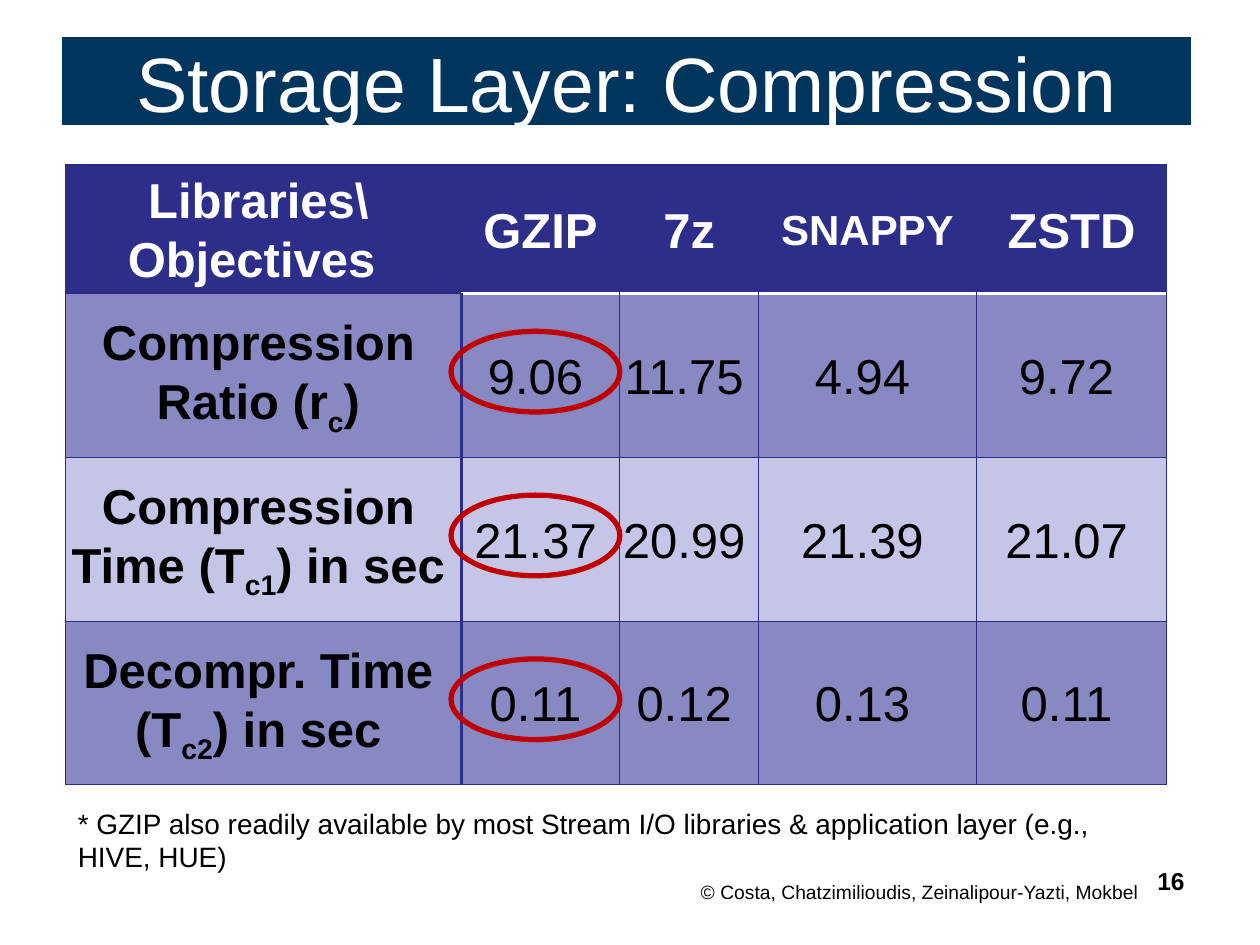
from dataclasses import dataclass

import pptx
import pptx.dml.color
import pptx.enum.shapes
import pptx.enum.text
import pptx.oxml
import pptx.oxml.ns
import pptx.util

Inches, Pt = pptx.util.Inches, pptx.util.Pt
RGB = pptx.dml.color.RGBColor.from_string
Shape = pptx.enum.shapes.MSO_SHAPE
Align = pptx.enum.text.PP_ALIGN
Anchor = pptx.enum.text.MSO_ANCHOR


@dataclass(frozen=True)
class Theme:
    face: str = "Arial"
    banner: str = "00355E"
    head: str = "2D2D8A"
    grid: str = "2A2A89"
    dark: str = "8888C2"
    light: str = "C5C5E8"
    ring: str = "C00000"
    white: str = "FFFFFF"
    black: str = "000000"
    title: float = 44
    cell: float = 28
    small: float = 24
    note: float = 16
    page: float = 14
    credit: float = 11
    thin: float = 0.75
    thick: float = 2
    bold_ring: float = 3


@dataclass(frozen=True)
class Box:
    left: float
    top: float
    width: float
    height: float

    def place(self) -> tuple:
        return tuple(Inches(n) for n in (self.left, self.top, self.width, self.height))


@dataclass(frozen=True)
class Label:
    box: Box
    text: str
    size: float
    align: Align
    bold: bool = False


@dataclass(frozen=True)
class Row:
    lead: tuple  # text, subscript, text
    vals: tuple


T = Theme()

LABELS = (
    Label(Box(5.42, 6.94, 3.76, 0.29),
          "© Costa, Chatzimilioudis, Zeinalipour-Yazti, Mokbel", T.credit, Align.CENTER),
    Label(Box(8.94, 6.82, 0.56, 0.52), "16", T.page, Align.RIGHT, True),
    Label(Box(0.52, 6.35, 8.74, 0.64),
          "* GZIP also readily available by most Stream I/O libraries & "
          "application layer (e.g., HIVE, HUE)", T.note, Align.LEFT),
)
HEADS = ("Libraries\\\nObjectives ", "GZIP", "7z", "SNAPPY", "ZSTD")
ROWS = (
    Row(("Compression Ratio (r", "c", ")"), ("9.06", "11.75", "4.94", "9.72")),
    Row(("Compression Time (T", "c1", ") in sec"), ("21.37", "20.99", "21.39", "21.07")),
    Row(("Decompr. Time (T", "c2", ") in sec"), ("0.11", "0.12", "0.13", "0.11")),
)
WIDTHS = (3.14, 1.26, 1.1, 1.73, 1.51)
HEIGHTS = (1.02, 1.3, 1.3, 1.3)


def put(item, **vals) -> None:
    for key, val in vals.items():
        setattr(item, key, val)


def write(para, text: str, size: float, color: str, bold: bool = False, base: int = 0) -> None:
    run = para.add_run()
    run.text = text
    put(run.font, name=T.face, size=Pt(size), bold=bold)
    run.font.color.rgb = RGB(color)
    if base:
        run.font._element.set("baseline", str(base * 1000))


def edge(cell, **sides: tuple) -> None:
    """Draw cell borders; they must come before the fill, in L, R, T, B order."""
    props = cell._tc.get_or_add_tcPr()
    spot = 0
    for side in "LRTB":
        if side not in sides:
            continue
        color, width = sides[side]
        line = pptx.oxml.parse_xml(
            f'<a:ln{side} {pptx.oxml.ns.nsdecls("a")} w="{int(Pt(width))}">'
            f'<a:solidFill><a:srgbClr val="{color}"/></a:solidFill></a:ln{side}>')
        props.insert(spot, line)
        spot += 1


def style(cell, fill: str):
    put(cell, margin_left=0, margin_top=0, margin_right=Inches(0.08),
        margin_bottom=0, vertical_anchor=Anchor.MIDDLE)
    cell.fill.solid()
    cell.fill.fore_color.rgb = RGB(fill)
    return cell.text_frame


def centre(para):
    put(para, alignment=Align.CENTER, line_spacing=1.07)
    return para


def banner(slide, box: Box, text: str) -> None:
    shape = slide.shapes.add_shape(Shape.RECTANGLE, *box.place())
    shape.shadow.inherit = False
    shape.fill.solid()
    shape.fill.fore_color.rgb = shape.line.color.rgb = RGB(T.banner)
    shape.line.width = Pt(T.thin)
    put(shape.text_frame, word_wrap=True, vertical_anchor=Anchor.MIDDLE)
    para = shape.text_frame.paragraphs[0]
    para.alignment = Align.CENTER
    write(para, text, T.title, T.white)


def label(slide, item: Label) -> None:
    frame = slide.shapes.add_textbox(*item.box.place()).text_frame
    frame.word_wrap = True
    para = frame.paragraphs[0]
    para.alignment = item.align
    write(para, item.text, item.size, T.black, item.bold)


def ring(slide, box: Box) -> None:
    shape = slide.shapes.add_shape(Shape.OVAL, *box.place())
    shape.shadow.inherit = False
    shape.fill.background()
    shape.line.color.rgb = RGB(T.ring)
    shape.line.width = Pt(T.bold_ring)


def grid(slide, box: Box) -> None:
    table = slide.shapes.add_table(len(HEIGHTS), len(WIDTHS), *box.place()).table
    for col, width in zip(table.columns, WIDTHS):
        col.width = Inches(width)
    for row, height in zip(table.rows, HEIGHTS):
        row.height = Inches(height)
    thin, rule = (T.grid, T.thin), (T.white, T.thick)
    side, plain = (T.head, T.thick), (T.head, T.thin)

    # Header row
    for c, text in enumerate(HEADS):
        cell = table.cell(0, c)
        frame = style(cell, T.head)
        for n, part in enumerate(text.split("\n")):
            para = centre(frame.add_paragraph() if n else frame.paragraphs[0])
            if c:
                para._p.get_or_add_pPr().set("marL", str(Inches(0.08)))
            write(para, part, T.small if text == "SNAPPY" else T.cell, T.white, True)
        edge(cell, L=plain, R=plain, T=thin, B=rule if c else thin)

    # Body rows, in bands
    for r, row in enumerate(ROWS, 1):
        fill = T.dark if r % 2 else T.light
        for c, parts in enumerate((row.lead, *((val,) for val in row.vals))):
            cell = table.cell(r, c)
            para = centre(style(cell, fill).paragraphs[0])
            for n, part in enumerate(parts):
                write(para, part, T.cell, T.black, c == 0, -25 if n == 1 else 0)
            edge(cell, L=side if c == 1 else thin, R=thin if c else side,
                 T=rule if r == 1 and c else thin, B=thin)


def main() -> None:
    deck = pptx.Presentation()
    put(deck, slide_width=Inches(10), slide_height=Inches(7.5))
    slide = deck.slides.add_slide(deck.slide_layouts[6])

    # Title and table
    banner(slide, Box(0.5, 0.3, 8.95, 0.69), "Storage Layer: Compression")
    grid(slide, Box(0.52, 1.31, sum(WIDTHS), sum(HEIGHTS)))

    # Rings on the GZIP column
    for n in range(len(ROWS)):
        ring(slide, Box(3.58, 2.63 + n * HEIGHTS[1], 1.34, 0.64))

    # Note and footer
    for item in LABELS:
        label(slide, item)
    deck.save("out.pptx")


if __name__ == "__main__":
    main()
